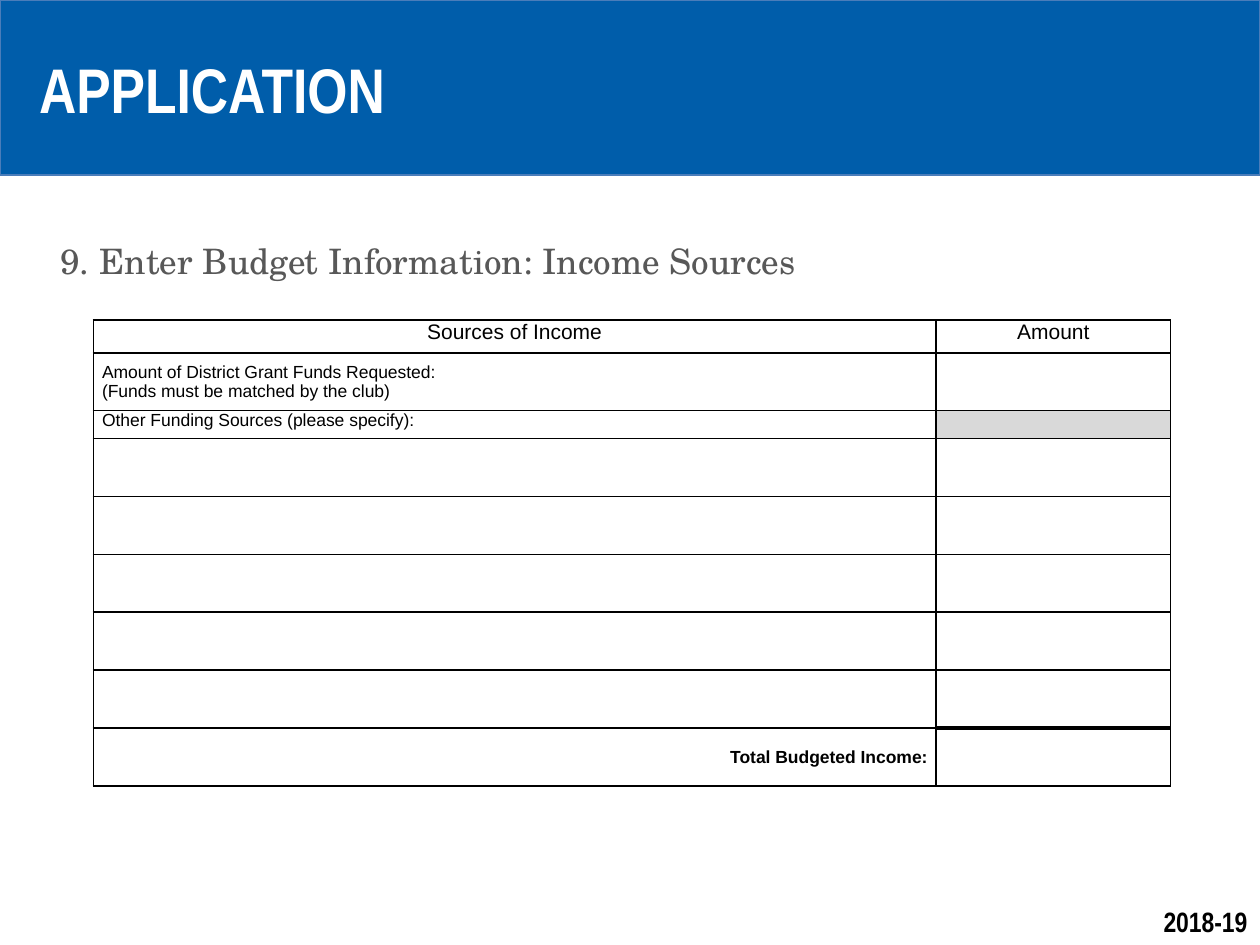
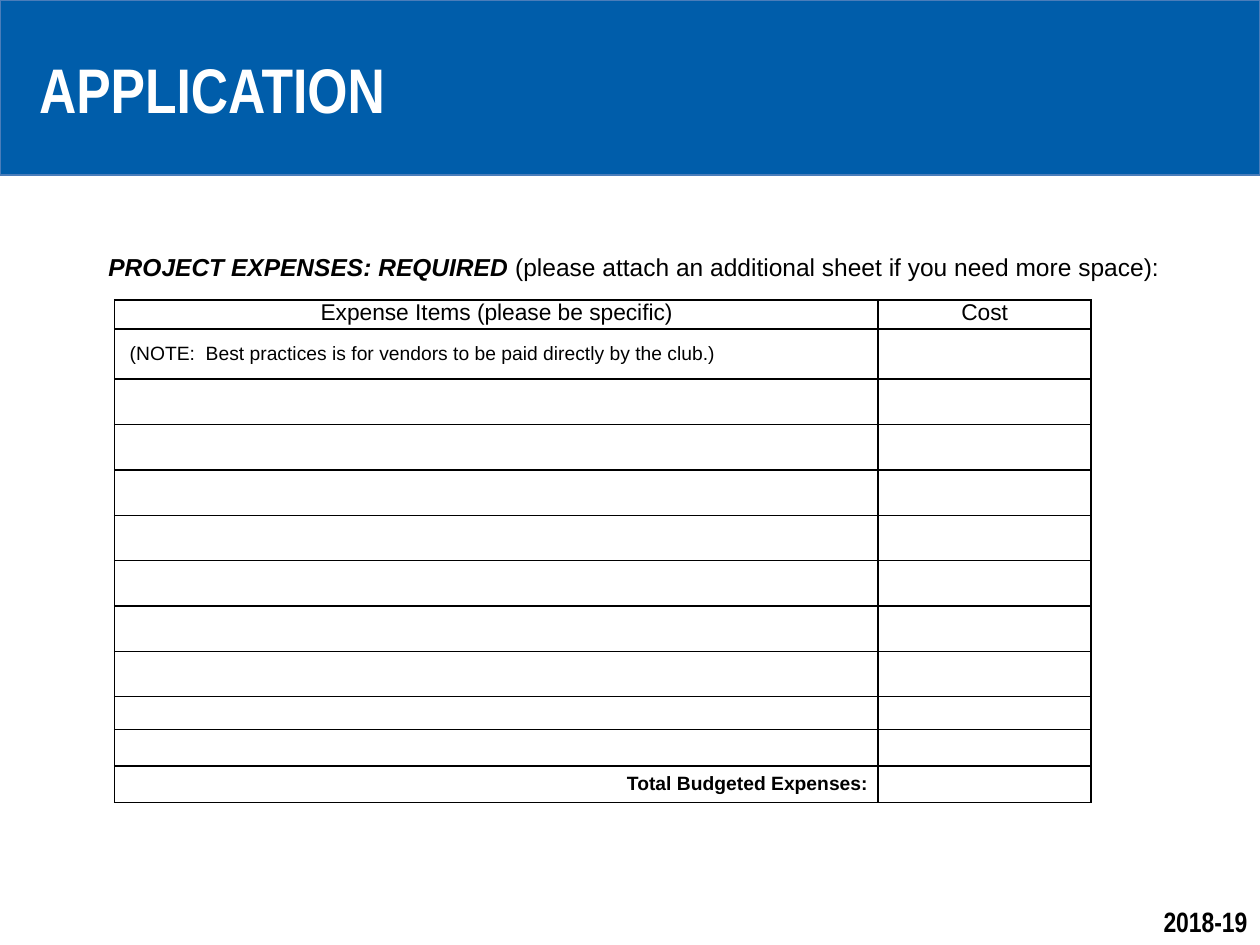
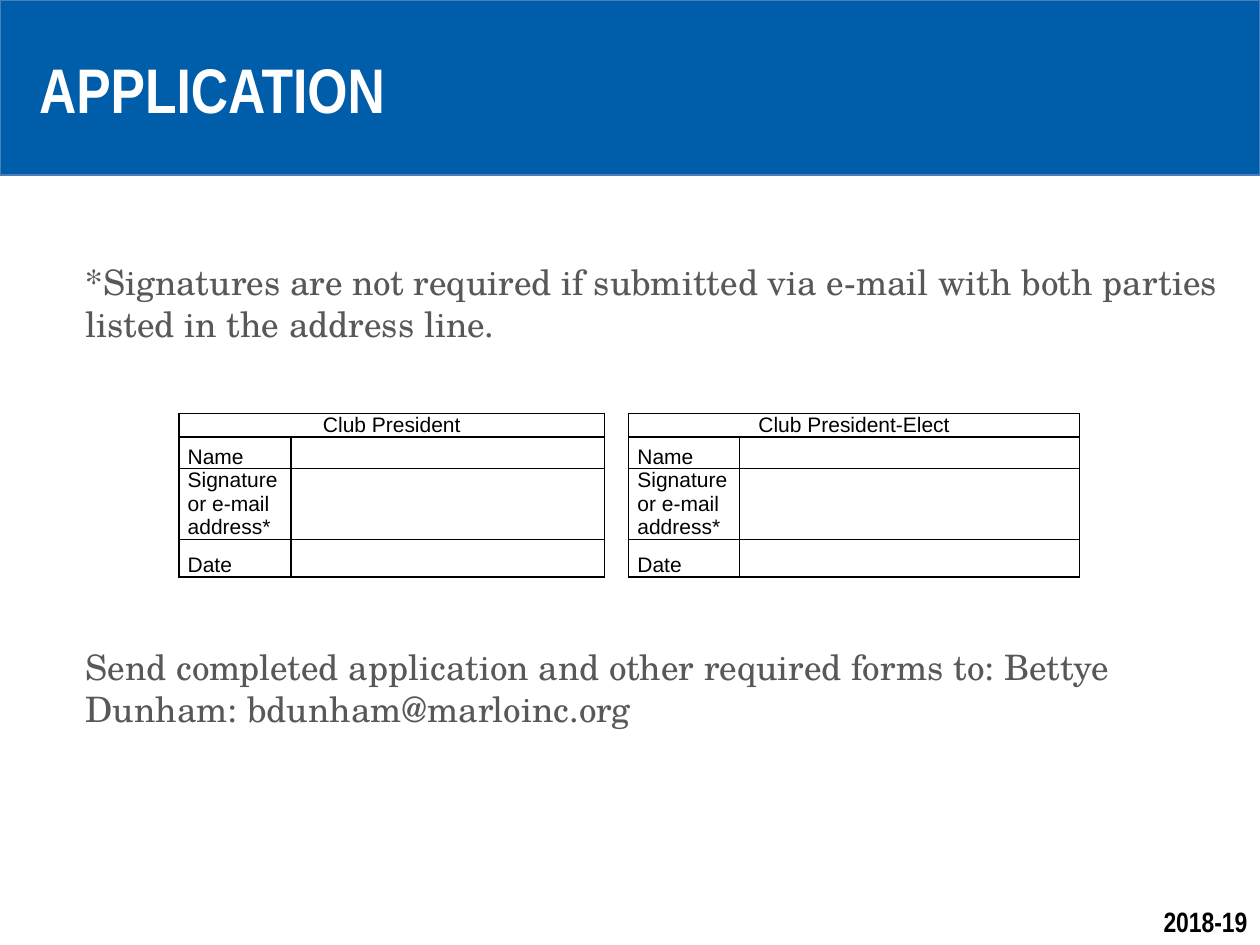
"""Build three grant application slides: income, expenses and signatures."""
import dataclasses
import typing

import lxml.etree
import pptx
import pptx.dml.color
import pptx.enum.shapes
import pptx.enum.text
import pptx.oxml.ns
import pptx.util

ALIGN = pptx.enum.text.PP_ALIGN
ANCHOR = pptx.enum.text.MSO_ANCHOR
qn = pptx.oxml.ns.qn

BLUE, BAND_LINE, WHITE, BLACK = "005DAA", "4A7DBA", "FFFFFF", "000000"
TEXT_GRAY, CELL_GRAY = "585858", "D9D9D9"
SANS, NARROW, SERIF = "Arial", "Arial Narrow", "TeX Gyre Schola"
COLUMNS, ROWS = 100, 75
NO_TABLE_STYLE = "{2D5ABB26-0587-4C30-8999-92F81FD0307C}"
EDGES = {"left": "a:lnL", "right": "a:lnR", "top": "a:lnT", "bottom": "a:lnB"}


class Box(typing.NamedTuple):
    left: float
    top: float
    width: float
    height: float


@dataclasses.dataclass
class Words:
    text: str
    size: float = 20
    font: str = SERIF
    color: str = TEXT_GRAY
    bold: bool = False
    italic: bool = False


@dataclasses.dataclass
class Entry:
    lines: tuple[str, ...] = ()
    size: float = 10
    align: ALIGN = ALIGN.LEFT
    anchor: ANCHOR = ANCHOR.TOP
    bold: bool = False
    inset: float = 0.7
    fill: str | None = None
    edges: dict[str, float] = dataclasses.field(default_factory=lambda: dict.fromkeys(EDGES, 1))
    span: int = 1


def grid(units: float) -> pptx.util.Emu:
    """Turn grid columns or rows into a length."""
    return pptx.util.Inches(units * 10 / COLUMNS)


def rgb(value: str) -> pptx.dml.color.RGBColor:
    """Turn a hex string into a colour."""
    return pptx.dml.color.RGBColor.from_string(value)


def place(shape, box: Box) -> None:
    """Move a shape to a box on the grid."""
    shape.left, shape.top, shape.width, shape.height = map(grid, box)


def add_words(paragraph, words: Words) -> None:
    """Add one formatted run to a paragraph."""
    run = paragraph.add_run()
    run.text = words.text
    run.font.size = pptx.util.Pt(words.size)
    run.font.name = words.font
    run.font.bold = words.bold
    run.font.italic = words.italic
    run.font.color.rgb = rgb(words.color)


def prepare_frame(text_frame) -> None:
    """Make a text frame wrap from the top at a fixed size."""
    text_frame.word_wrap = True
    text_frame.auto_size = pptx.enum.text.MSO_AUTO_SIZE.NONE
    text_frame.vertical_anchor = ANCHOR.TOP


def decorate_layout(layout, slide) -> None:
    """Put the band and the year on the layout and set its title place."""
    band = slide.shapes.add_shape(
        pptx.enum.shapes.MSO_SHAPE.RECTANGLE, *map(grid, Box(0, 0, COLUMNS, 13.9)))
    band.shadow.inherit = False
    band.fill.solid()
    band.fill.fore_color.rgb = rgb(BLUE)
    band.line.color.rgb = rgb(BAND_LINE)
    band.line.width = pptx.util.Pt(0.75)
    year = slide.shapes.add_textbox(*map(grid, Box(85.6, 71.3, 14.4, 3.7)))
    prepare_frame(year.text_frame)
    paragraph = year.text_frame.paragraphs[0]
    paragraph.alignment = ALIGN.RIGHT
    add_words(paragraph, Words("2018-19", 16, NARROW, BLACK, bold=True))
    for shape in (band, year):
        layout.shapes.element.insert(2, shape.element)
    place(layout.placeholders[0], Box(2.1, 4.7, 95.8, 7.4))


def add_title(slide) -> None:
    """Fill the title placeholder."""
    text_frame = slide.shapes.title.text_frame
    prepare_frame(text_frame)
    paragraph = text_frame.paragraphs[0]
    paragraph.alignment = ALIGN.LEFT
    paragraph.line_spacing = 0.8
    add_words(paragraph, Words("APPLICATION", 36, NARROW, WHITE, bold=True))


def add_body(slide, box: Box, paragraphs: list[list[Words]], gap: float = 0) -> None:
    """Fill the body placeholder with unbulleted paragraphs set apart by a gap."""
    body = slide.placeholders[1]
    place(body, box)
    prepare_frame(body.text_frame)
    for index, runs in enumerate(paragraphs):
        paragraph = body.text_frame.add_paragraph() if index else body.text_frame.paragraphs[0]
        properties = paragraph._p.get_or_add_pPr()
        properties.set("marL", "0")
        properties.set("indent", "0")
        lxml.etree.SubElement(properties, qn("a:buNone"))
        paragraph.space_before = pptx.util.Pt(gap if index else 0)
        for words in runs:
            add_words(paragraph, words)


def add_borders(cell, edges: dict[str, float]) -> None:
    """Draw black borders of the given widths on a cell."""
    properties = cell._tc.get_or_add_tcPr()
    for edge, tag in EDGES.items():
        if edge in edges:
            line = lxml.etree.SubElement(properties, qn(tag), w=str(pptx.util.Pt(edges[edge])))
            fill = lxml.etree.SubElement(line, qn("a:solidFill"))
            lxml.etree.SubElement(fill, qn("a:srgbClr"), val=BLACK)


def fill_cell(cell, entry: Entry) -> None:
    """Write and format one table cell."""
    add_borders(cell, entry.edges)
    if entry.fill:
        cell.fill.solid()
        cell.fill.fore_color.rgb = rgb(entry.fill)
    else:
        cell.fill.background()
    cell.margin_left = cell.margin_right = grid(entry.inset)
    cell.margin_top = cell.margin_bottom = 0
    cell.vertical_anchor = entry.anchor
    first = cell.text_frame.paragraphs[0]
    for index, line in enumerate(entry.lines):
        paragraph = cell.text_frame.add_paragraph() if index else first
        paragraph.alignment = entry.align
        add_words(paragraph, Words(line, entry.size, SANS, BLACK, entry.bold))
    if not entry.lines:
        lxml.etree.SubElement(first._p, qn("a:endParaRPr"), sz=str(int(entry.size * 100)))


def add_grid_table(slide, left: float, top: float, widths: list[float],
                   heights: list[float], rows: list[list[Entry]]) -> None:
    """Add a bordered table with the given column widths and row heights."""
    box = Box(left, top, sum(widths), sum(heights))
    table = slide.shapes.add_table(len(heights), len(widths), *map(grid, box)).table
    table.first_row = table.horz_banding = False
    table._tbl.tblPr.find(qn("a:tableStyleId")).text = NO_TABLE_STYLE
    for column, width in zip(table.columns, widths):
        column.width = grid(width)
    for row, height in zip(table.rows, heights):
        row.height = grid(height)
    for row_index, entries in enumerate(rows):
        for column_index, entry in enumerate(entries):
            cell = table.cell(row_index, column_index)
            fill_cell(cell, entry)
            if entry.span > 1:
                cell.merge(table.cell(row_index, column_index + entry.span - 1))


def heading(text: str, size: float, span: int = 1) -> Entry:
    """Describe a centred heading cell."""
    return Entry((text,), size, ALIGN.CENTER, span=span)


def edged(**widths: float) -> Entry:
    """Describe an empty cell with some heavier edges."""
    return Entry(edges=dict.fromkeys(EDGES, 1) | widths)


def blank_rows(count: int) -> list[list[Entry]]:
    """Describe rows of two empty cells."""
    return [[Entry(), Entry()] for _ in range(count)]


def total_rows(label: str, size: float, weight: float, inset: float) -> list[list[Entry]]:
    """Describe the last blank row and the total below its heavy line."""
    total = Entry((label,), size, ALIGN.RIGHT, ANCHOR.MIDDLE, bold=True, inset=inset)
    return [[Entry(), edged(bottom=weight)], [total, edged(top=weight)]]


def fill_income(slide) -> None:
    """Add the income sources."""
    add_body(slide, Box(3.8, 18.5, 94.2, 6.8),
             [[Words("9. Enter Budget Information: Income Sources")]])
    request = ("Amount of District Grant Funds Requested:", "(Funds must be matched by the club)")
    rows = [
        [heading("Sources of Income", 12), heading("Amount", 12)],
        [Entry(request, anchor=ANCHOR.MIDDLE), Entry()],
        [Entry(("Other Funding Sources (please specify):",)), Entry(fill=CELL_GRAY)],
        *blank_rows(4),
        *total_rows("Total Budgeted Income:", 10, 2.25, 0.7),
    ]
    add_grid_table(slide, 7.4, 25.4, [66.9, 18.6], [2.6, 4.6, 2.2] + [4.6] * 6, rows)


def fill_expenses(slide) -> None:
    """Add the project expenses."""
    add_body(slide, Box(7.6, 19.5, 90.4, 4), [[
        Words("PROJECT EXPENSES: REQUIRED", 14, SANS, BLACK, bold=True, italic=True),
        Words(" (please attach an additional sheet if you need more space):", 14, SANS, BLACK),
    ]])
    note = "(NOTE:  Best practices is for vendors to be paid directly by the club.)"
    rows = [
        [heading("Expense Items (please be specific)", 13), heading("Cost", 13)],
        [Entry((note,), 11, anchor=ANCHOR.MIDDLE, inset=1.2), Entry()],
        *blank_rows(8),
        *total_rows("Total Budgeted Expenses:", 11, 1.5, 0.8),
    ]
    heights = [2.3, 4] + [3.6] * 7 + [2.6, 2.9, 2.9]
    add_grid_table(slide, 9.1, 23.8, [60.6, 16.9], heights, rows)


def fill_signatures(slide) -> None:
    """Add the signature block and the address."""
    add_body(slide, Box(5.8, 20.2, 94.2, 40), [
        [Words("*Signatures are not required if submitted via e-mail with both parties "
               "listed in the address line.")],
        [Words("Send completed application and other required forms to: Bettye Dunham: "
               "bdunham@marloinc.org")],
    ], gap=172)
    gap = Entry(edges={"left": 1, "right": 1})
    rows = [[heading("Club President", 12, 2), Entry(), gap,
             heading("Club President-Elect", 12, 2), Entry()]]
    for label in ("Name", "Signature or e-mail address*", "Date"):
        field = Entry((label,), 12, anchor=ANCHOR.BOTTOM)
        rows.append([field, Entry(), gap, field, Entry()])
    add_grid_table(slide, 14.2, 32.8, [8.9, 24.9, 1.9, 8.8, 27], [1.9, 2.5, 5.6, 3], rows)


def main() -> None:
    """Build and save the presentation."""
    presentation = pptx.Presentation()
    presentation.slide_width, presentation.slide_height = grid(COLUMNS), grid(ROWS)
    layout = presentation.slide_layouts[1]
    for index, fill_slide in enumerate((fill_income, fill_expenses, fill_signatures)):
        slide = presentation.slides.add_slide(layout)
        if index == 0:
            decorate_layout(layout, slide)
        add_title(slide)
        fill_slide(slide)
    presentation.save("out.pptx")


if __name__ == "__main__":
    main()
